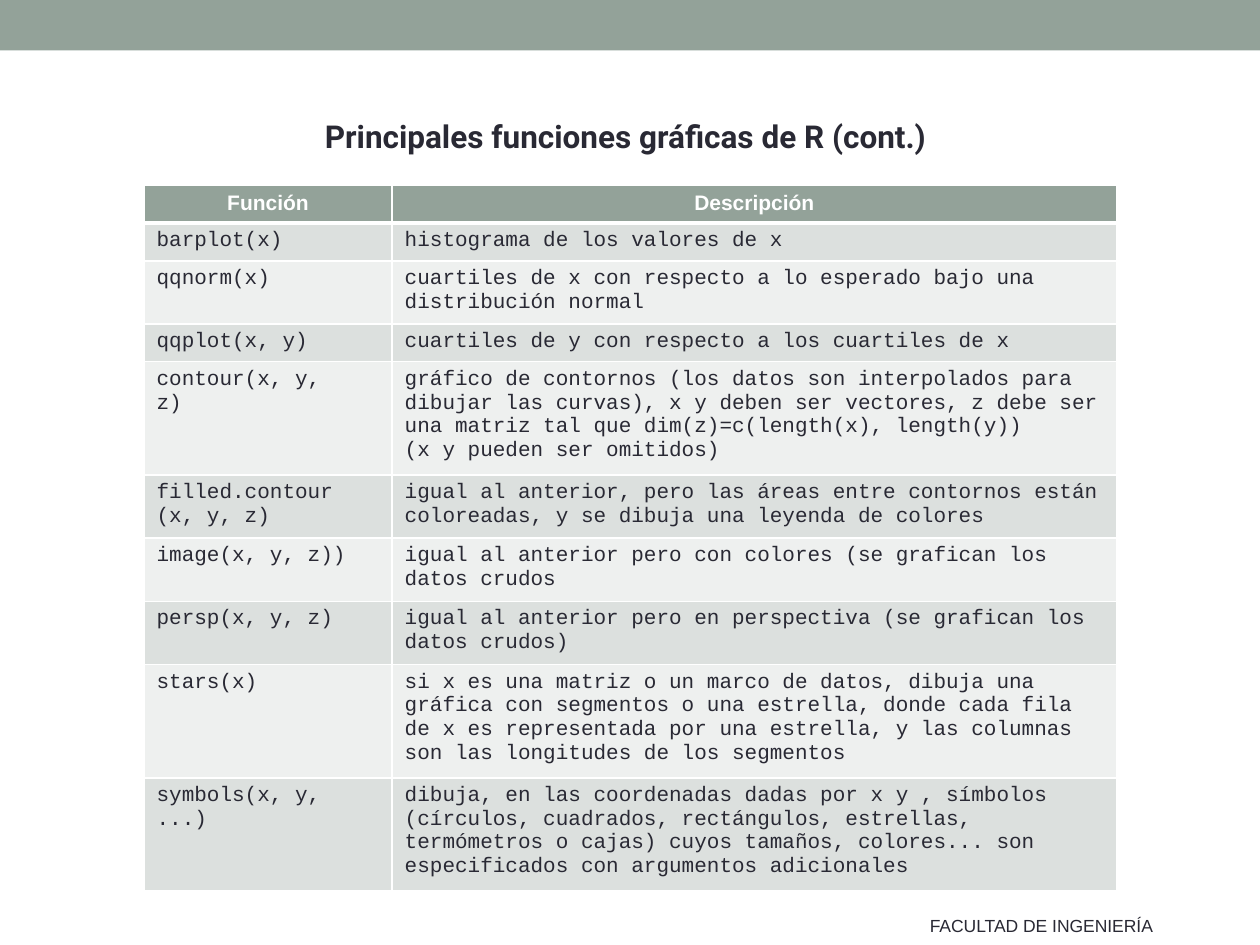
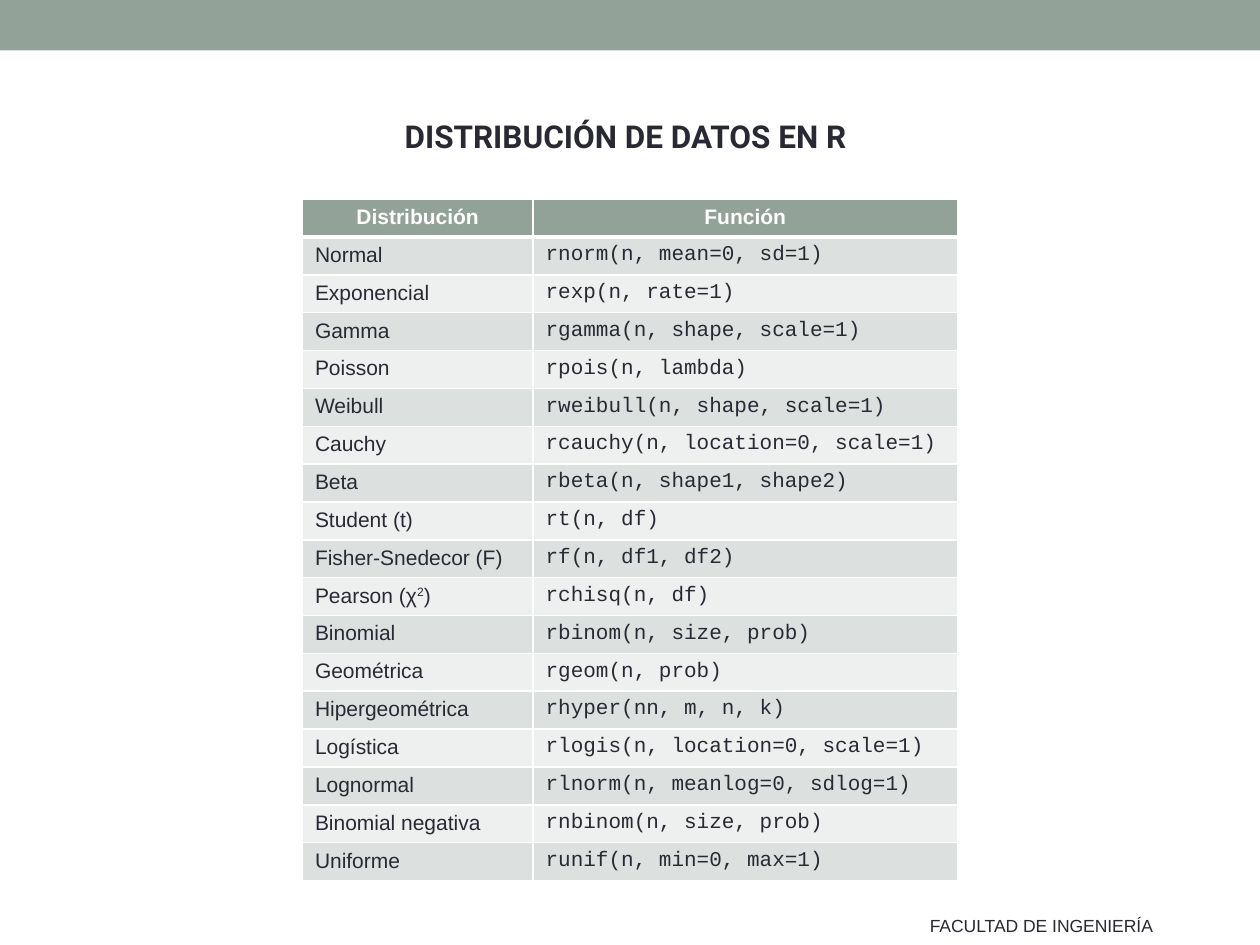
from dataclasses import dataclass

from lxml import etree
from pptx import Presentation
from pptx.dml.color import RGBColor
from pptx.enum.shapes import MSO_SHAPE
from pptx.enum.text import MSO_ANCHOR, MSO_AUTO_SIZE, PP_ALIGN
from pptx.oxml.ns import qn
from pptx.slide import Slide, SlideLayout
from pptx.table import _Cell
from pptx.text.text import TextFrame
from pptx.util import Pt

RECT = MSO_SHAPE.RECTANGLE
TOP = MSO_ANCHOR.TOP
NO_FIT, GROW = MSO_AUTO_SIZE.NONE, MSO_AUTO_SIZE.SHAPE_TO_FIT_TEXT
LEFT, CENTER = PP_ALIGN.LEFT, PP_ALIGN.CENTER

SAGE = RGBColor(0x93, 0xA2, 0x99)
DARK_BAND = RGBColor(0xDC, 0xE0, 0xDE)
LIGHT_BAND = RGBColor(0xEE, 0xF0, 0xEF)
INK = RGBColor(0x29, 0x29, 0x34)
WHITE = RGBColor(0xFF, 0xFF, 0xFF)

SANS, CODE, TITLE_FONT = "Arial", "Courier New", "Roboto"
SLIDE_W, SLIDE_H = Pt(720), Pt(540)
LINE_H, CELL_PAD = 14.4, 7.2
TITLE_ONLY = 5


@dataclass(frozen=True)
class Row:
    name: str
    text: str
    lines: int = 1


@dataclass(frozen=True)
class TableSlide:
    title: str
    left: float
    top: float
    widths: tuple[float, float]
    name_font: str
    header: Row
    rows: tuple[Row, ...]


GRAPHICS = TableSlide(
    "Principales funciones gráficas de R (cont.)", 82.3, 105.8, (141.8, 414), CODE,
    Row("Función", "Descripción"),
    (
        Row("barplot(x)", "histograma de los valores de x"),
        Row("qqnorm(x)", "cuartiles de x con respecto a lo esperado bajo una "
            "distribución normal", 2),
        Row("qqplot(x, y)", "cuartiles de y con respecto a los cuartiles de x"),
        Row("contour(x, y,\nz)", "gráfico de contornos (los datos son interpolados para "
            "dibujar las curvas), x y deben ser vectores, z debe ser una matriz tal que "
            "dim(z)=c(length(x), length(y))\n(x y pueden ser omitidos)", 4),
        Row("filled.contour\n(x, y, z)", "igual al anterior, pero las áreas entre "
            "contornos están coloreadas, y se dibuja una leyenda de colores", 2),
        Row("image(x, y, z))", "igual al anterior pero con colores (se grafican los "
            "datos crudos", 2),
        Row("persp(x, y, z)", "igual al anterior pero en perspectiva (se grafican los "
            "datos crudos)", 2),
        Row("stars(x)", "si x es una matriz o un marco de datos, dibuja una gráfica con "
            "segmentos o una estrella, donde cada fila de x es representada por una "
            "estrella, y las columnas son las longitudes de los segmentos", 4),
        Row("symbols(x, y,\n...)", "dibuja, en las coordenadas dadas por x y , símbolos "
            "(círculos, cuadrados, rectángulos, estrellas, termómetros o cajas) cuyos "
            "tamaños, colores... son especificados con argumentos adicionales", 4),
    ),
)

DISTRIBUTIONS = TableSlide(
    "DISTRIBUCIÓN DE DATOS EN R", 172.8, 113.8, (131.8, 242.6), SANS,
    Row("Distribución", "Función"),
    (
        Row("Normal", "rnorm(n, mean=0, sd=1)"),
        Row("Exponencial", "rexp(n, rate=1)"),
        Row("Gamma", "rgamma(n, shape, scale=1)"),
        Row("Poisson", "rpois(n, lambda)"),
        Row("Weibull", "rweibull(n, shape, scale=1)"),
        Row("Cauchy", "rcauchy(n, location=0, scale=1)"),
        Row("Beta", "rbeta(n, shape1, shape2)"),
        Row("Student (t)", "rt(n, df)"),
        Row("Fisher-Snedecor (F)", "rf(n, df1, df2)"),
        Row("Pearson (χ^2^)", "rchisq(n, df)"),
        Row("Binomial", "rbinom(n, size, prob)"),
        Row("Geométrica", "rgeom(n, prob)"),
        Row("Hipergeométrica", "rhyper(nn, m, n, k)"),
        Row("Logística", "rlogis(n, location=0, scale=1)"),
        Row("Lognormal", "rlnorm(n, meanlog=0, sdlog=1)"),
        Row("Binomial negativa", "rnbinom(n, size, prob)"),
        Row("Uniforme", "runif(n, min=0, max=1)"),
    ),
)


def write(tf: TextFrame, text: str, *, font: str = SANS, size: float = 12,
          color: RGBColor = INK, bold: bool = False, align: PP_ALIGN = LEFT,
          line_spacing: float = 1.0, before: float = 0) -> None:
    """Fill tf: a newline starts a paragraph, ^...^ marks a superscript."""
    for i, line in enumerate(text.split("\n")):
        p = tf.add_paragraph() if i else tf.paragraphs[0]
        p.alignment, p.line_spacing, p.space_before = align, line_spacing, Pt(before)
        for j, part in enumerate(line.split("^")):
            r = p.add_run()
            r.text = part
            r.font.name, r.font.size, r.font.bold = font, Pt(size), bold
            r.font.color.rgb = color
            if j % 2:
                r.font._element.set("baseline", "30000")


def set_borders(cell: _Cell, top: float, bottom: float) -> None:
    tcPr = cell._tc.get_or_add_tcPr()
    for i, (side, width) in enumerate((("L", 1), ("R", 1), ("T", top), ("B", bottom))):
        ln = etree.Element(qn(f"a:ln{side}"), w=str(Pt(width)))
        fill = etree.SubElement(ln, qn("a:solidFill"))
        etree.SubElement(fill, qn("a:srgbClr"), val=str(WHITE))
        tcPr.insert(i, ln)


def add_table(slide: Slide, spec: TableSlide) -> None:
    rows = (spec.header, *spec.rows)
    heights = [CELL_PAD + LINE_H * row.lines for row in rows]
    table = slide.shapes.add_table(
        len(rows), 2, Pt(spec.left), Pt(spec.top),
        Pt(sum(spec.widths)), Pt(sum(heights))).table
    table.horz_banding = False
    for column, width in zip(table.columns, spec.widths):
        column.width = Pt(width)
    for i, (row, height) in enumerate(zip(rows, heights)):
        table.rows[i].height = Pt(height)
        for j, (text, font) in enumerate(((row.name, spec.name_font), (row.text, CODE))):
            cell = table.cell(i, j)
            cell.fill.solid()
            if i == 0:
                cell.fill.fore_color.rgb = SAGE
                write(cell.text_frame, text, color=WHITE, bold=True, align=CENTER)
            else:
                cell.fill.fore_color.rgb = DARK_BAND if i % 2 else LIGHT_BAND
                write(cell.text_frame, text, font=font)
            set_borders(cell, top=3 if i == 1 else 1, bottom=3 if i == 0 else 1)


def add_title(slide: Slide, text: str) -> None:
    sp = slide.shapes.title
    sp.left, sp.top, sp.width, sp.height = Pt(54), Pt(54.7), Pt(607), Pt(465.1)
    tf = sp.text_frame
    tf.vertical_anchor, tf.auto_size, tf.word_wrap = TOP, NO_FIT, True
    write(tf, text, font=TITLE_FONT, size=18, bold=True, align=CENTER,
          line_spacing=1.4, before=3.6)


def add_footer(slide: Slide) -> None:
    tf = slide.shapes.add_textbox(Pt(524.2), Pt(519.1), Pt(145.4), Pt(19.4)).text_frame
    tf.word_wrap, tf.auto_size = False, GROW
    write(tf, "FACULTAD DE INGENIERÍA", size=10)


def add_layout_band(slide: Slide, layout: SlideLayout) -> None:
    """Draw the top band and move it behind the layout's placeholders."""
    sp = slide.shapes.add_shape(RECT, 0, 0, SLIDE_W, Pt(28.8))
    sp.shadow.inherit = False
    sp.fill.solid()
    sp.fill.fore_color.rgb = SAGE
    sp.line.fill.background()
    layout.shapes.element.insert(2, sp.element)


def main() -> None:
    prs = Presentation()
    prs.slide_width, prs.slide_height = SLIDE_W, SLIDE_H
    layout = prs.slide_layouts[TITLE_ONLY]
    for i, spec in enumerate((GRAPHICS, DISTRIBUTIONS)):
        slide = prs.slides.add_slide(layout)
        if i == 0:
            add_layout_band(slide, layout)
        add_title(slide, spec.title)
        add_footer(slide)
        add_table(slide, spec)
    prs.save("out.pptx")


if __name__ == "__main__":
    main()
